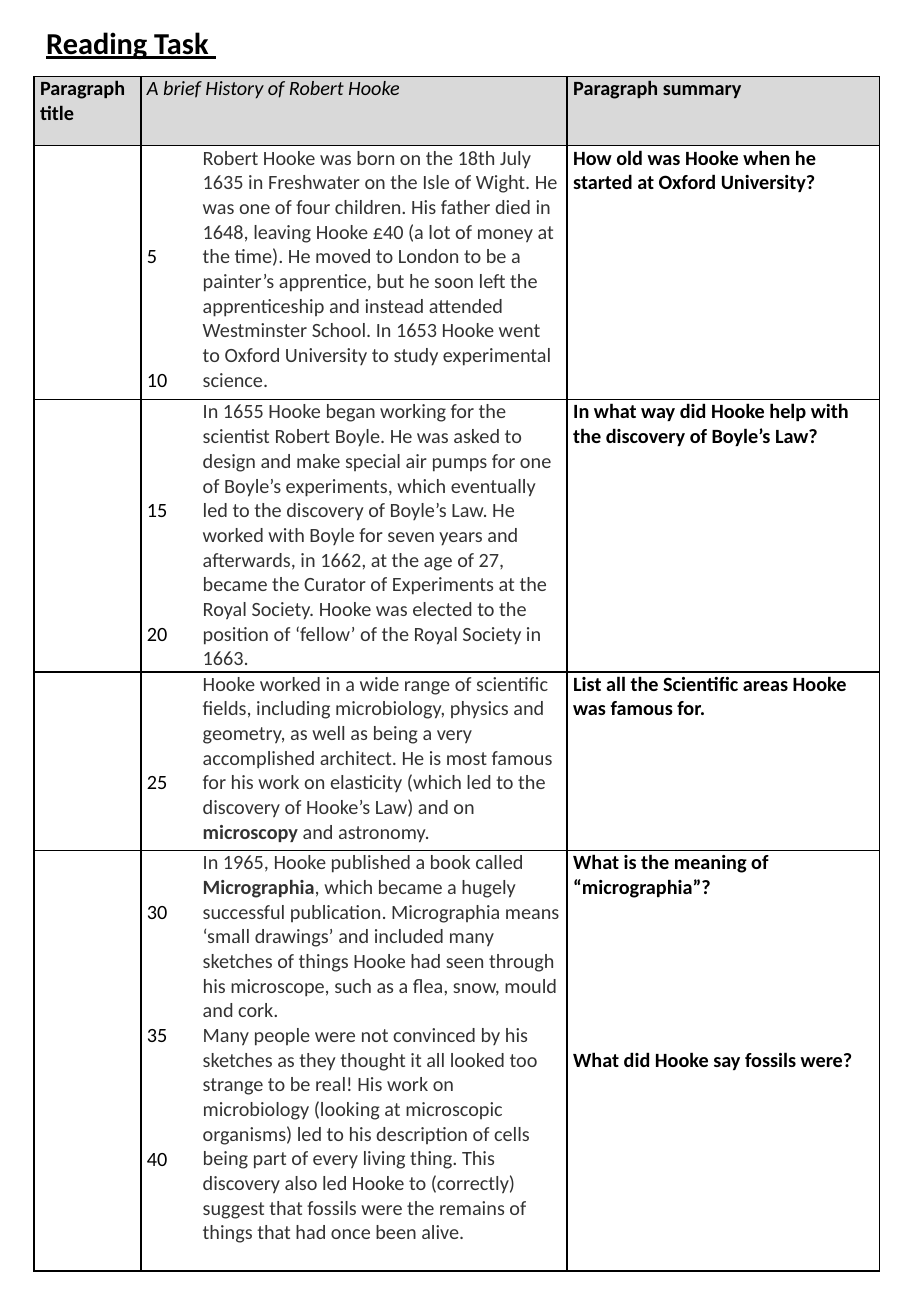
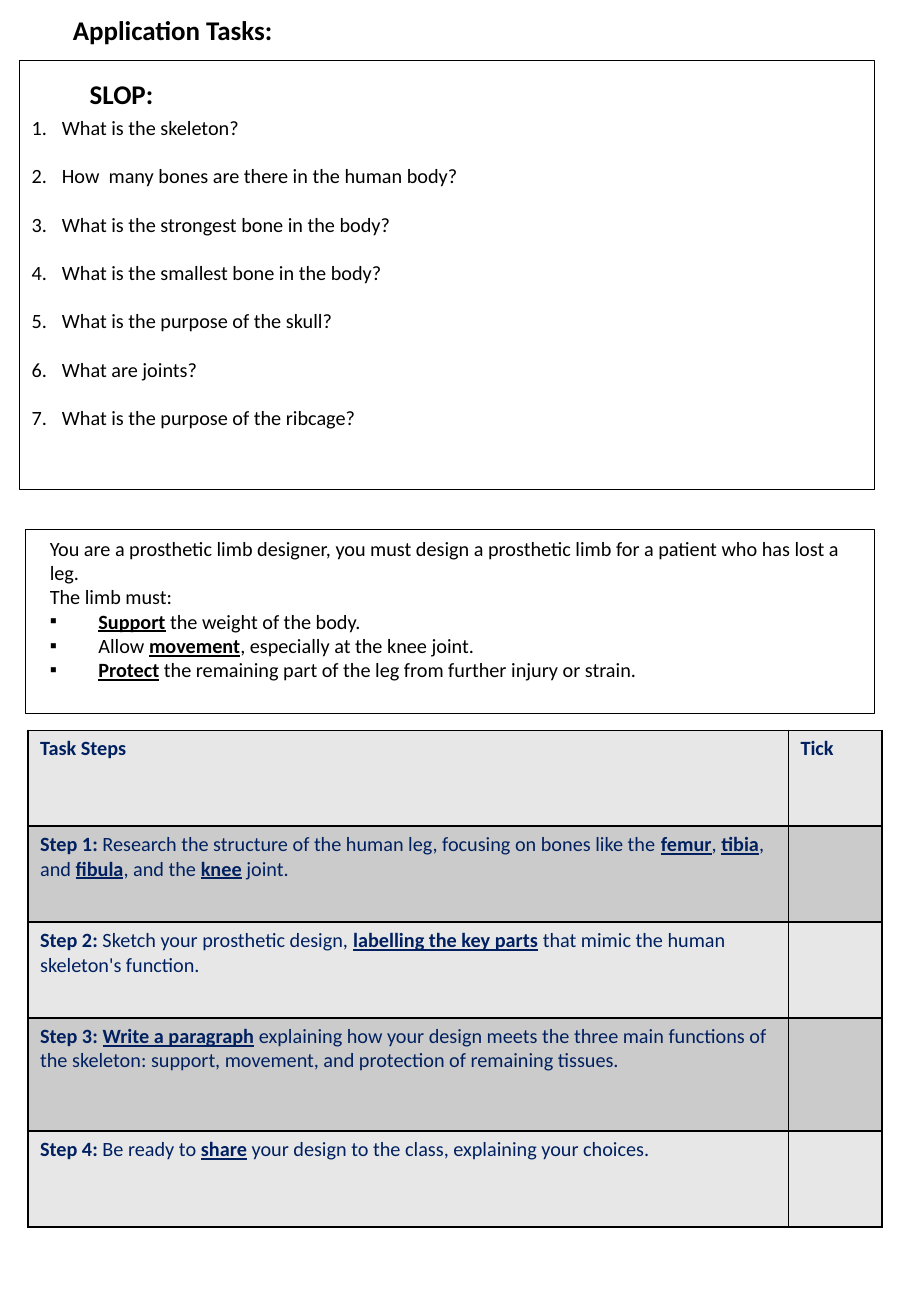
"""Builds a reading task page and an application task page."""
from dataclasses import dataclass

from lxml import etree
from pptx import Presentation
from pptx import util as u
from pptx.dml.color import RGBColor
from pptx.enum import text as t
from pptx.oxml import ns


@dataclass(frozen=True)
class Theme:
    font: str = "Calibri"
    ink: str = "000000"
    prose: str = "333333"
    navy: str = "002060"
    head: str = "D9D9D9"
    light: str = "E7E7E7"
    dark: str = "CBCBCB"
    body: float = 12
    sub: float = 16
    title: float = 18
    line: float = 14.65
    rule: float = 1
    frame: float = 0.75


TH = Theme()
WIDE, HIGH = u.Inches(7.5), u.Inches(10.83)


@dataclass(frozen=True)
class Box:
    left: float
    top: float
    width: float
    height: float


@dataclass(frozen=True)
class Para:
    text: str
    color: str = TH.ink
    size: float = TH.body
    bold: bool = False
    italic: bool = False
    under: bool = False
    gap: float = 0
    space: float = 1
    left: float = 0
    hang: float = 0
    mark: str = ""


@dataclass(frozen=True)
class Cell:
    paras: tuple = ()
    fill: str = ""
    lead: float = 0
    sides: str = "LRTB"


@dataclass(frozen=True)
class Part:
    story: tuple
    tasks: tuple
    first: int
    nums: tuple


def across(share: float) -> int:
    """Turn a percentage of the slide width into a length."""
    return round(WIDE * share / 100)


def down(share: float) -> int:
    """Turn a percentage of the slide height into a length."""
    return round(HIGH * share / 100)


def spot(box: Box) -> tuple:
    """Give the left, top, width and height of a box."""
    return across(box.left), down(box.top), across(box.width), down(box.height)


def bullet(para, item: Para) -> None:
    """Set the indent and the bullet of a paragraph."""
    props = para._p.get_or_add_pPr()
    props.set("marL", str(u.Inches(item.left)))
    props.set("indent", str(u.Inches(-item.hang)))
    if item.mark == "1.":
        etree.SubElement(props, ns.qn("a:buAutoNum"), type="arabicPeriod")
    elif item.mark:
        etree.SubElement(props, ns.qn("a:buChar"), char=item.mark)
    else:
        etree.SubElement(props, ns.qn("a:buNone"))


def write(frame, items: tuple) -> None:
    """Fill a text frame; in a text |*x| is bold and |_x| also underlined."""
    for i, item in enumerate(items):
        para = frame.add_paragraph() if i else frame.paragraphs[0]
        para.alignment = t.PP_ALIGN.LEFT
        para.line_spacing = item.space
        para.space_before = u.Pt(item.gap)
        bullet(para, item)
        for bit in item.text.split("|"):
            flag = bit[:1] if bit[:1] in ("*", "_") else ""
            if bit:
                run = para.add_run()
                run.text = bit[len(flag):]
                font = run.font
                font.name, font.size = TH.font, u.Pt(item.size)
                font.bold = item.bold or bool(flag)
                font.italic = item.italic
                font.underline = item.under or flag == "_"
                font.color.rgb = RGBColor.from_string(item.color)


def place(shape, box: Box, items: tuple, framed: bool = False, top: float = 0.05) -> None:
    """Move a text shape, frame it if asked, and fill it."""
    shape.left, shape.top, shape.width, shape.height = spot(box)
    frame = shape.text_frame
    frame.word_wrap = True
    frame.auto_size = t.MSO_AUTO_SIZE.NONE
    frame.vertical_anchor = t.MSO_ANCHOR.TOP
    frame.margin_top = u.Inches(top)
    if framed:
        shape.line.color.rgb = RGBColor.from_string(TH.ink)
        shape.line.width = u.Pt(TH.frame)
    write(frame, items)


def border(cell, sides: str) -> None:
    """Rule the named sides of a table cell and clear the others."""
    props = cell._tc.get_or_add_tcPr()
    for i, side in enumerate("LRTB"):
        line = etree.Element(ns.qn(f"a:ln{side}"), w=str(u.Pt(TH.rule)))
        if side in sides:
            fill = etree.SubElement(line, ns.qn("a:solidFill"))
            etree.SubElement(fill, ns.qn("a:srgbClr"), val=TH.ink)
        else:
            etree.SubElement(line, ns.qn("a:noFill"))
        props.insert(i, line)


def grid(slide, left: float, top: float, cols: tuple, rows: tuple,
         cells: list, pad: tuple):
    """Draw a table whose columns and rows are shares of the slide."""
    box = Box(left, top, sum(cols), sum(rows))
    table = slide.shapes.add_table(len(rows), len(cols), *spot(box)).table
    table.first_row = table.horz_banding = False
    for col, share in zip(table.columns, cols):
        col.width = across(share)
    for row, share, line in zip(table.rows, rows, cells):
        row.height = down(share)
        for cell, data in zip(row.cells, line):
            cell.margin_left = cell.margin_right = u.Inches(pad[0])
            cell.margin_top = u.Inches(pad[1]) + u.Pt(data.lead)
            cell.margin_bottom = u.Inches(pad[1])
            if data.fill:
                cell.fill.solid()
                cell.fill.fore_color.rgb = RGBColor.from_string(data.fill)
            else:
                cell.fill.background()
            border(cell, data.sides)
            write(cell.text_frame, data.paras)
    return table


PARTS = (
    Part(("Robert Hooke was born on the 18th July 1635 in Freshwater on the Isle of "
          "Wight. He was one of four children. His father died in 1648, leaving Hooke "
          "£40 (a lot of money at the time). He moved to London to be a painter’s "
          "apprentice, but he soon left the apprenticeship and instead attended "
          "Westminster School. In 1653 Hooke went to Oxford University to study "
          "experimental science.",),
         ("How old was Hooke when he started at Oxford University?",), 5, (5, 10)),
    Part(("In 1655 Hooke began working for the scientist Robert Boyle. He was asked to "
          "design and make special air pumps for one of Boyle’s experiments, which "
          "eventually led to the discovery of Boyle’s Law. He worked with Boyle for "
          "seven years and afterwards, in 1662, at the age of 27, became the Curator "
          "of Experiments at the Royal Society. Hooke was elected to the position of "
          "‘fellow’ of the Royal Society in 1663.",),
         ("In what way did Hooke help with the discovery of Boyle’s Law?",), 5, (15, 20)),
    Part(("Hooke worked in a wide range of scientific fields, including microbiology, "
          "physics and geometry, as well as being a very accomplished architect. He is "
          "most famous for his work on elasticity (which led to the discovery of "
          "Hooke’s Law) and on |*microscopy| and astronomy.",),
         ("List all the Scientific areas Hooke was famous for.",), 5, (25,)),
    Part(("In 1965, Hooke published a book called |*Micrographia|, which became a hugely "
          "successful publication. Micrographia means ‘small drawings’ and included "
          "many sketches of things Hooke had seen through his microscope, such as a "
          "flea, snow, mould and cork.",
          "Many people were not convinced by his sketches as they thought it all looked "
          "too strange to be real! His work on microbiology (looking at microscopic "
          "organisms) led to his description of cells being part of every living thing. "
          "This discovery also led Hooke to (correctly) suggest that fossils were the "
          "remains of things that had once been alive."),
         ("What is the meaning of “micrographia”?", "What did Hooke say fossils were?"),
         3, (30, 35, 40)),
)
ASKS = (
    "What is the skeleton?",
    "How  many bones are there in the human body?",
    "What is the strongest bone in the body?",
    "What is the smallest bone in the body?",
    "What is the purpose of the skull?",
    "What are joints?",
    "What is the purpose of the ribcage?",
)
BRIEF = (
    "You are a prosthetic limb designer, you must design a prosthetic limb for a "
    "patient who has lost a leg.",
    "The limb must:",
)
NEEDS = (
    "|_Support| the weight of the body.",
    "Allow |_movement|, especially at the knee joint.",
    "|_Protect| the remaining part of the leg from further injury or strain.",
)
STEPS = (
    ("*Task Steps", "*Tick"),
    ("*Step 1:| Research the structure of the human leg, focusing on bones like the "
     "|_femur|, |_tibia|, and |_fibula|, and the |_knee| joint.", ""),
    ("*Step 2:| Sketch your prosthetic design, |_labelling the key parts| that mimic "
     "the human skeleton's function.", ""),
    ("*Step 3: |_Write a paragraph| explaining how your design meets the three main "
     "functions of the skeleton: support, movement, and protection of remaining "
     "tissues.", ""),
    ("*Step 4:| Be ready to |_share| your design to the class, explaining your "
     "choices.", ""),
)


def entry(part: Part) -> tuple:
    """Make the table row of one part of the story."""
    nums = tuple(Para(str(n), gap=4 * TH.line if i else 0)
                 for i, n in enumerate(part.nums))
    story = tuple(Para(s, TH.prose) for s in part.story)
    tasks = tuple(Para(s, bold=True, gap=6 * TH.line if i else 0)
                  for i, s in enumerate(part.tasks))
    return (Cell(), Cell(nums, lead=(part.first - 1) * TH.line, sides="LTB"),
            Cell(story, sides="RTB"), Cell(tasks))


def reading(deck) -> None:
    """Draw the reading task."""
    slide = deck.slides.add_slide(deck.slide_layouts[5])
    place(slide.shapes.title, Box(3.73, 0, 50, 4.71),
          (Para("Reading Task ", size=TH.title, bold=True, under=True, space=1.5),))
    head = (Cell((Para("Paragraph title", bold=True),), TH.head),
            Cell((Para("A brief History of Robert Hooke", italic=True),), TH.head),
            Cell(fill=TH.head),
            Cell((Para("Paragraph summary", bold=True),), TH.head))
    table = grid(slide, 3.73, 5.82, (11.73, 6.13, 40.67, 34.27),
                 (5.26, 19.3, 20.68, 13.57, 31.95),
                 [head, *map(entry, PARTS)], (0.05, 0))
    table.cell(0, 1).merge(table.cell(0, 2))


def tasks(deck) -> None:
    """Draw the application tasks."""
    slide = deck.slides.add_slide(deck.slide_layouts[3])
    title, quiz, brief = slide.placeholders
    place(title, Box(6.67, 0.55, 29.87, 3.51),
          (Para("Application Tasks:", size=TH.sub, bold=True),))
    place(quiz, Box(2.13, 4.62, 93.87, 32.59),
          tuple(Para(s, gap=14.2 if i else 0, left=0.25, hang=0.25, mark="1.")
                for i, s in enumerate(ASKS)), True, 0.45)
    label = slide.shapes.add_textbox(0, 0, 0, 0)
    place(label, Box(8.53, 5.45, 13.33, 3.42),
          (Para("SLOP:", size=TH.sub, bold=True),))
    place(brief, Box(2.8, 40.26, 93.2, 13.94),
          tuple(Para(s, left=0.1) for s in BRIEF)
          + tuple(Para(s, left=0.5, hang=0.4, mark="▪") for s in NEEDS), True)
    cells = [tuple(Cell((Para(s, TH.navy),), TH.dark if i % 2 else TH.light)
                   for s in row) for i, row in enumerate(STEPS)]
    grid(slide, 3.07, 55.49, (83.47, 10.27), (7.29, 7.29, 7.29, 8.59, 7.29),
         cells, (0.1, 0.05))


def main() -> None:
    """Build and save the deck."""
    deck = Presentation()
    deck.slide_width, deck.slide_height = WIDE, HIGH
    reading(deck)
    tasks(deck)
    deck.save("out.pptx")


if __name__ == "__main__":
    main()
